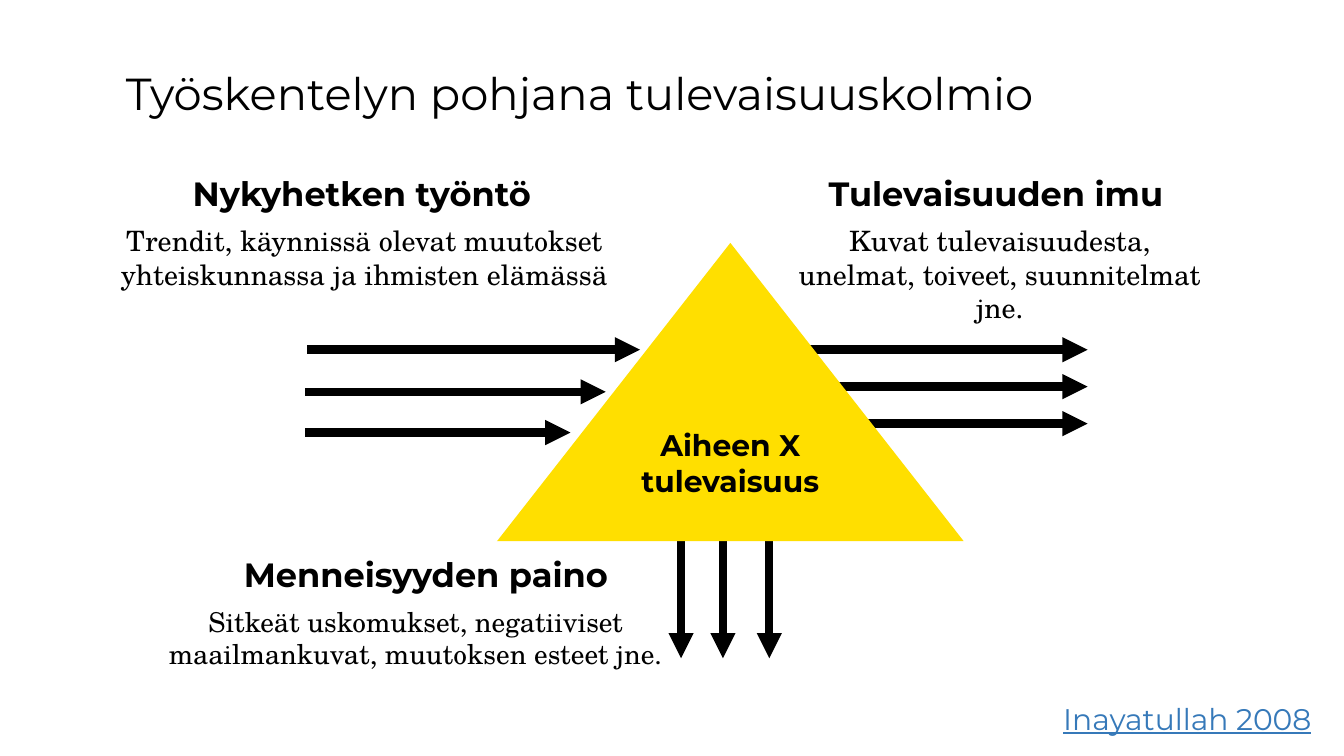
from dataclasses import dataclass

from lxml import etree
from pptx import Presentation
from pptx.dml.color import RGBColor
from pptx.enum.shapes import MSO_CONNECTOR, MSO_SHAPE
from pptx.enum.text import MSO_ANCHOR, PP_ALIGN
from pptx.oxml.ns import qn
from pptx.util import Pt

STRAIGHT = MSO_CONNECTOR.STRAIGHT
TRIANGLE = MSO_SHAPE.ISOSCELES_TRIANGLE
MIDDLE = MSO_ANCHOR.MIDDLE
LEFT, CENTER, RIGHT = PP_ALIGN.LEFT, PP_ALIGN.CENTER, PP_ALIGN.RIGHT


@dataclass(frozen=True)
class Theme:
    ink: RGBColor = RGBColor(0x00, 0x00, 0x00)
    link: RGBColor = RGBColor(0x36, 0x79, 0xB9)
    accent: RGBColor = RGBColor(0xFF, 0xDF, 0x00)
    display: str = "Montserrat"
    serif: str = "TeX Gyre Schola"
    title: float = 32
    heading: float = 24
    label: float = 21.3
    body: float = 20
    body_small: float = 19.5
    arrow: float = 6


THEME = Theme()


def write(tf, text, size=THEME.body, font=THEME.display, color=THEME.ink,
          bold=False, underline=False, align=CENTER, wrap=True):
    """Fill a text frame, one paragraph per line of text."""
    tf.word_wrap = wrap
    for i, line in enumerate(text.split("\n")):
        p = tf.add_paragraph() if i else tf.paragraphs[0]
        p.alignment = align
        r = p.add_run()
        r.text = line
        r.font.name = font
        r.font.size = Pt(size)
        r.font.bold = bold
        r.font.underline = underline
        r.font.color.rgb = color


def add_text(slide, box, text, **fmt):
    sp = slide.shapes.add_textbox(*map(Pt, box))
    write(sp.text_frame, text, **fmt)


def add_force(slide, heading, heading_box, body, body_box, size=THEME.body):
    """Add a bold heading with its explanation below."""
    add_text(slide, heading_box, heading, size=THEME.heading, bold=True, wrap=False)
    add_text(slide, body_box, body, size=size, font=THEME.serif)


def add_arrow(slide, x1, y1, x2, y2):
    cxn = slide.shapes.add_connector(STRAIGHT, Pt(x1), Pt(y1), Pt(x2), Pt(y2))
    cxn.line.color.rgb = THEME.ink
    cxn.line.width = Pt(THEME.arrow)
    etree.SubElement(cxn.line._get_or_add_ln(), qn("a:tailEnd"), type="triangle")
    etree.SubElement(cxn._element.spPr, qn("a:effectLst"))


def add_triangle(slide, box, text):
    sp = slide.shapes.add_shape(TRIANGLE, *map(Pt, box))
    sp.shadow.inherit = False
    sp.fill.solid()
    sp.fill.fore_color.rgb = THEME.accent
    sp.line.fill.background()
    tf = sp.text_frame
    tf.vertical_anchor = MIDDLE
    tf.margin_bottom = Pt(9)
    write(tf, text, size=THEME.label, bold=True)


def main():
    prs = Presentation()
    prs.slide_width, prs.slide_height = Pt(960), Pt(540)
    slide = prs.slides.add_slide(prs.slide_layouts[6])

    add_text(slide, (82.8, 43.2, 793.4, 90.7), "Työskentelyn pohjana tulevaisuuskolmio",
             size=THEME.title, align=LEFT)

    for x, y, tip in ((219.6, 249.8, 457.2), (218.2, 279.9, 432.7), (218.2, 309, 407.5)):
        add_arrow(slide, x, y, tip, y)
    for i in range(3):
        y = 249.8 + 26.4 * i
        add_arrow(slide, 577.4, y, 776.9, y)
    for x in (486.5, 516.4, 549.5):
        add_arrow(slide, x, 334.8, x, 470.2)

    add_triangle(slide, (355, 173.5, 333.4, 213.1), "Aiheen X\ntulevaisuus")

    add_force(slide, "Nykyhetken työntö", (126.7, 120.2, 263.5, 36),
              "Trendit, käynnissä olevat muutokset yhteiskunnassa ja ihmisten elämässä",
              (54.7, 156.2, 411.1, 79.9))
    add_force(slide, "Tulevaisuuden imu", (580.3, 120.2, 262.1, 36),
              "Kuvat tulevaisuudesta, unelmat, toiveet, suunnitelmat jne.",
              (563, 156.2, 302.4, 55.4))
    add_force(slide, "Menneisyyden paino", (162.7, 392.4, 283, 36),
              "Sitkeät uskomukset, negatiiviset maailmankuvat, muutoksen esteet jne.",
              (111.6, 428.4, 370.8, 128.2), size=THEME.body_small)

    add_text(slide, (537.8, 496.8, 406.1, 33.1), "Inayatullah 2008",
             size=THEME.label, color=THEME.link, underline=True, align=RIGHT)

    prs.save("out.pptx")


if __name__ == "__main__":
    main()
